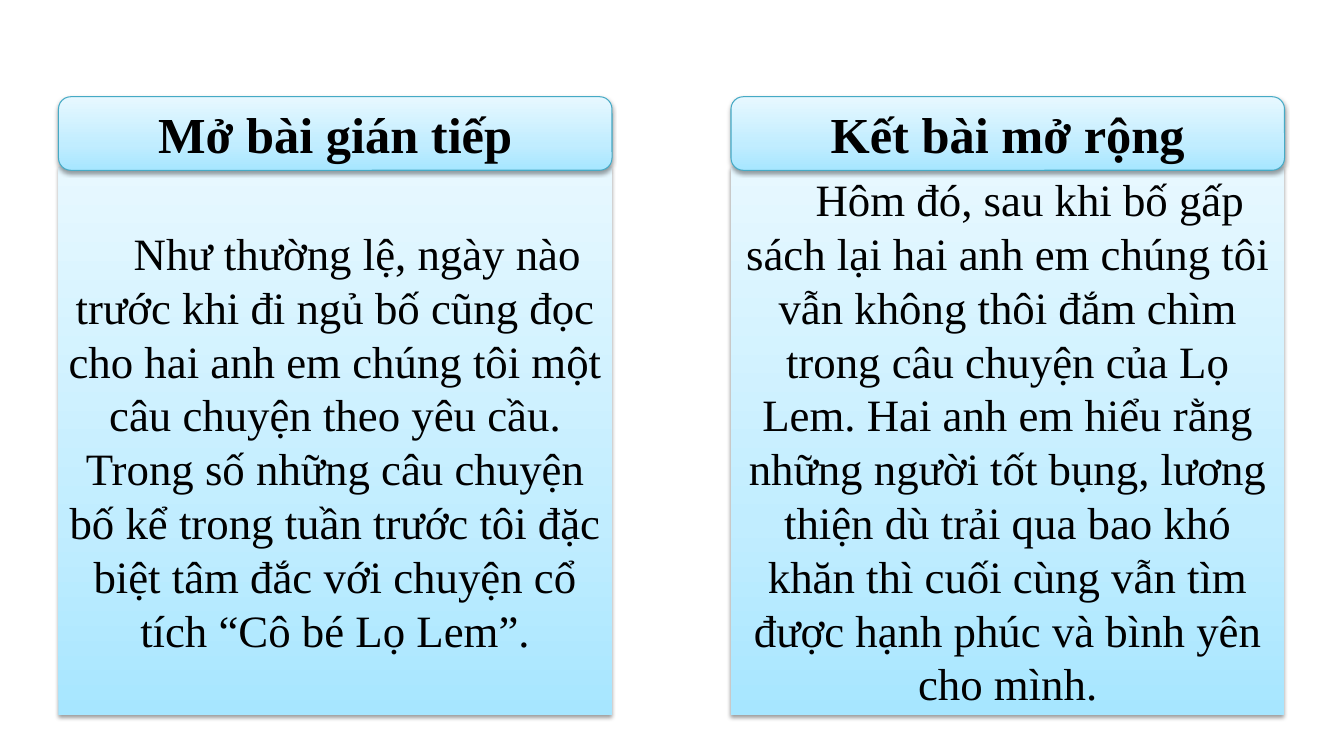
from copy import deepcopy

from lxml.etree import SubElement
from pptx import Presentation
from pptx.dml.color import RGBColor
from pptx.enum.shapes import MSO_SHAPE
from pptx.enum.text import MSO_ANCHOR, PP_ALIGN
from pptx.oxml.ns import qn
from pptx.util import Inches, Pt

COLORS = {
    "bottom": "A7E6FF",
    "middle": "C1EDFF",
    "top": "E7F8FF",
    "outline": "46AAC5",
    "text": "000000",
    "shadow": "000000",
}
COLUMNS = [
    (
        "Mở bài gián tiếp",
        "Như thường lệ, ngày nào trước khi đi ngủ bố cũng đọc cho hai anh em "
        "chúng tôi một câu chuyện theo yêu cầu. Trong số những câu chuyện bố kể "
        "trong tuần trước tôi đặc biệt tâm đắc với chuyện cổ tích “Cô bé Lọ Lem”.",
    ),
    (
        "Kết bài mở rộng",
        "Hôm đó, sau khi bố gấp sách lại hai anh em chúng tôi vẫn không thôi đắm "
        "chìm trong câu chuyện của Lọ Lem. Hai anh em hiểu rằng những người tốt "
        "bụng, lương thiện dù trải qua bao khó khăn thì cuối cùng vẫn tìm được "
        "hạnh phúc và bình yên cho mình.",
    ),
]
COLUMN_LEFT, COLUMN_STEP, COLUMN_WIDTH = 0.58, 6.67, 5.49


class StoryPage:
    font_name = "Times New Roman"
    gradient = [(0, "bottom"), (0.35, "middle"), (1, "top")]

    def __init__(self, page):
        self.page = page

    def color(self, name):
        return RGBColor.from_string(COLORS[name])

    def shade(self, box):
        box.fill.gradient()
        box.fill.gradient_angle = 90
        stops = box._element.spPr.find(qn("a:gradFill")).find(qn("a:gsLst"))
        stops.append(deepcopy(stops[0]))
        for stop, (position, name) in zip(box.fill.gradient_stops, self.gradient):
            stop.position = position
            stop.color.rgb = self.color(name)

    def cast_shadow(self, box):
        box.shadow.inherit = False
        effects = box._element.spPr.find(qn("a:effectLst"))
        shadow = SubElement(
            effects,
            qn("a:outerShdw"),
            blurRad=str(Pt(3.1)),
            dist=str(Pt(1.6)),
            dir="5400000",
            rotWithShape="0",
        )
        tint = SubElement(shadow, qn("a:srgbClr"), val=COLORS["shadow"])
        SubElement(tint, qn("a:alpha"), val="38000")

    def panel(self, kind, left, top, height, text, size):
        box = self.page.shapes.add_shape(
            kind, Inches(left), Inches(top), Inches(COLUMN_WIDTH), Inches(height)
        )
        self.shade(box)
        self.cast_shadow(box)
        frame = box.text_frame
        frame.word_wrap = True
        frame.vertical_anchor = MSO_ANCHOR.MIDDLE
        para = frame.paragraphs[0]
        para.text = text
        para.alignment = PP_ALIGN.CENTER
        para.font.name = self.font_name
        para.font.size = Pt(size)
        para.font.color.rgb = self.color("text")
        return box, para

    def body(self, left, text):
        box, para = self.panel(MSO_SHAPE.RECTANGLE, left, 1.66, 5.43, text, 32)
        box.line.fill.background()
        para._p.get_or_add_pPr().set("indent", str(Inches(0.44)))

    def heading(self, left, text):
        box, para = self.panel(MSO_SHAPE.ROUNDED_RECTANGLE, left, 0.96, 0.73, text, 36)
        box.line.color.rgb = self.color("outline")
        box.line.width = Pt(0.75)
        para.font.bold = True


def main():
    deck = Presentation()
    deck.slide_width, deck.slide_height = Inches(13.33), Inches(7.5)
    story = StoryPage(deck.slides.add_slide(deck.slide_layouts[6]))
    for index, (title, passage) in enumerate(COLUMNS):
        left = COLUMN_LEFT + index * COLUMN_STEP
        story.body(left, passage)
        story.heading(left, title)
    deck.save("out.pptx")


if __name__ == "__main__":
    main()
